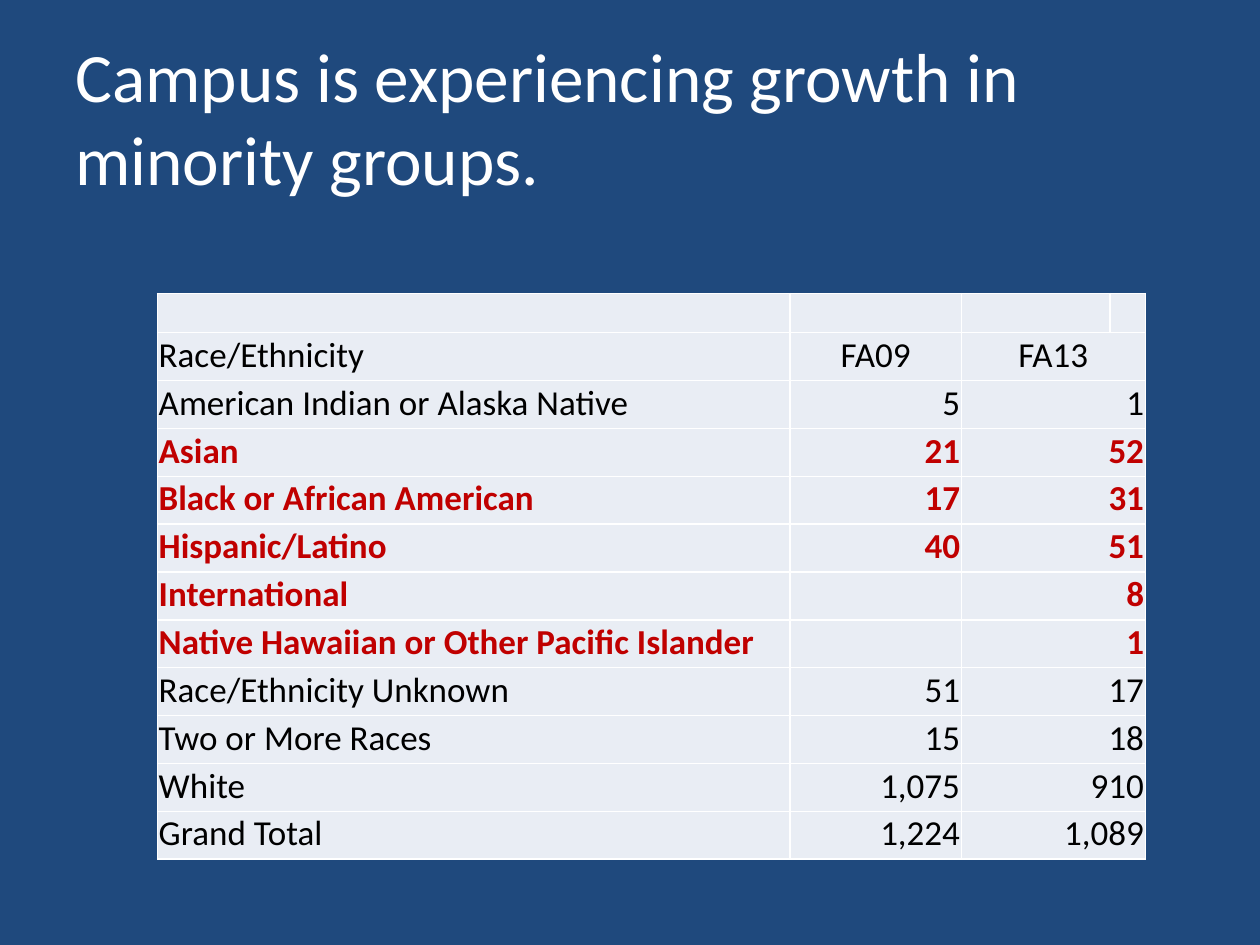
from dataclasses import dataclass

from lxml.etree import SubElement
from pptx import Presentation
from pptx.dml.color import RGBColor
from pptx.enum.text import MSO_ANCHOR, PP_ALIGN
from pptx.oxml.ns import qn
from pptx.util import Inches, Pt


@dataclass(frozen=True)
class Theme:
    font: str = "Calibri"
    title_size: float = 39.6
    table_size: float = 20
    background: str = "1F497D"
    title: str = "FFFFFF"
    text: str = "000000"
    highlight: str = "C00000"
    cell: str = "E9EDF4"
    border: str = "FFFFFF"
    border_width: float = 1


COLUMNS = [5.02, 1.36, 1.18, 0.28]
HEADER = ("Race/Ethnicity", "FA09", "FA13")
ENROLLMENT = [
    ("American Indian or Alaska Native", "5", "1"),
    ("Asian", "21", "52"),
    ("Black or African American", "17", "31"),
    ("Hispanic/Latino", "40", "51"),
    ("International", "", "8"),
    ("Native Hawaiian or Other Pacific Islander", "", "1"),
    ("Race/Ethnicity Unknown", "51", "17"),
    ("Two or More Races", "15", "18"),
    ("White", "1,075", "910"),
    ("Grand Total", "1,224", "1,089"),
]
GROWING = {
    "Asian",
    "Black or African American",
    "Hispanic/Latino",
    "International",
    "Native Hawaiian or Other Pacific Islander",
}


class SlideBuilder:
    def __init__(self, prs, theme):
        self.theme = theme
        self.s = prs.slides.add_slide(prs.slide_layouts[6])
        fill = self.s.background.fill
        fill.solid()
        fill.fore_color.rgb = RGBColor.from_string(theme.background)

    def add_run(self, p, text, size, color, bold=False):
        r = p.add_run()
        r.text = text
        r.font.name = self.theme.font
        r.font.size = Pt(size)
        r.font.bold = bold
        r.font.color.rgb = RGBColor.from_string(color)

    def add_title(self, text, left, top, width, height):
        sp = self.s.shapes.add_textbox(
            Inches(left), Inches(top), Inches(width), Inches(height))
        tf = sp.text_frame
        tf.word_wrap = True
        tf.vertical_anchor = MSO_ANCHOR.MIDDLE
        self.add_run(tf.paragraphs[0], text, self.theme.title_size, self.theme.title)

    def style_cell(self, cell):
        cell.margin_left = cell.margin_right = cell.margin_top = Inches(0.01)
        cell.margin_bottom = 0
        tcPr = cell._tc.get_or_add_tcPr()
        for side in ("a:lnL", "a:lnR", "a:lnT", "a:lnB"):
            ln = SubElement(tcPr, qn(side), w=str(Pt(self.theme.border_width)))
            solid = SubElement(ln, qn("a:solidFill"))
            SubElement(solid, qn("a:srgbClr"), val=self.theme.border)
        cell.fill.solid()
        cell.fill.fore_color.rgb = RGBColor.from_string(self.theme.cell)

    def add_table(self, rows, left, top, columns, first_height, row_height):
        """Draw an empty top row, then rows whose last value spans two columns."""
        heights = [first_height] + [row_height] * len(rows)
        table = self.s.shapes.add_table(
            len(heights), len(columns), Inches(left), Inches(top),
            Inches(sum(columns)), Inches(sum(heights))).table
        table.first_row = table.horz_banding = False
        for column, width in zip(table.columns, columns):
            column.width = Inches(width)
        for row, height in zip(table.rows, heights):
            row.height = Inches(height)
        for cell in table.iter_cells():
            self.style_cell(cell)
        for i, values in enumerate(rows, start=1):
            table.cell(i, 2).merge(table.cell(i, 3))
            growing = values[0] in GROWING
            color = self.theme.highlight if growing else self.theme.text
            number_align = PP_ALIGN.CENTER if values == HEADER else PP_ALIGN.RIGHT
            for j, value in enumerate(values):
                if value:
                    p = table.cell(i, j).text_frame.paragraphs[0]
                    p.alignment = number_align if j else PP_ALIGN.LEFT
                    self.add_run(p, value, self.theme.table_size, color, growing)


def main():
    prs = Presentation()
    prs.slide_width, prs.slide_height = Inches(10), Inches(7.5)
    slide = SlideBuilder(prs, Theme())
    slide.add_title("Campus is experiencing growth in minority groups.",
                    0.5, 0.3, 9.33, 1.25)
    slide.add_table([HEADER] + ENROLLMENT, 1.25, 2.33, COLUMNS, 0.31, 0.38)
    prs.save("out.pptx")


if __name__ == "__main__":
    main()
